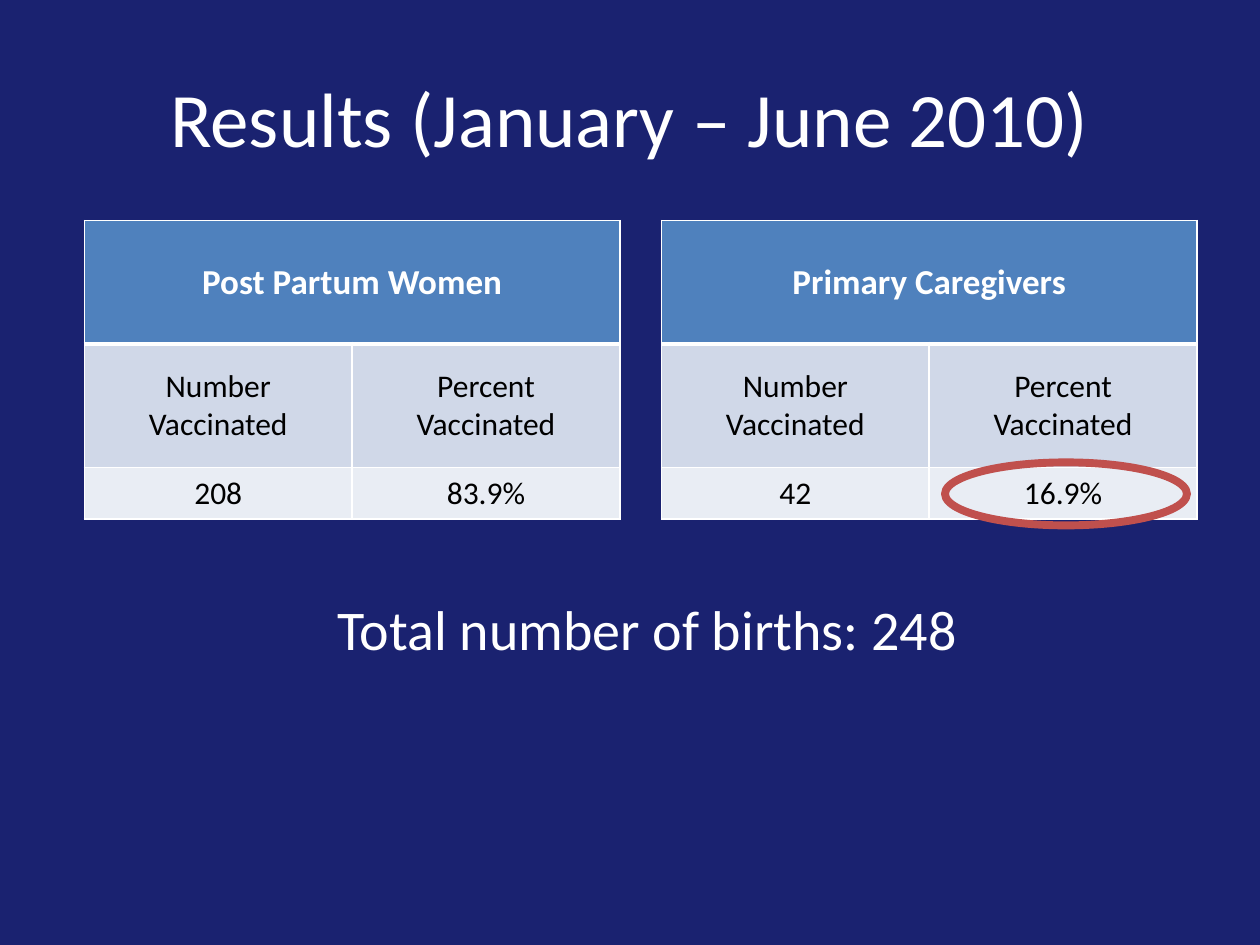
from dataclasses import dataclass
from lxml.etree import SubElement as Sub
from pptx import Presentation
from pptx.dml.color import RGBColor as RGB
from pptx.enum.shapes import MSO_SHAPE as Shape
from pptx.enum.text import MSO_ANCHOR as Anchor, PP_ALIGN as Align
from pptx.oxml.ns import qn
from pptx.util import Inches as In, Pt


@dataclass(frozen=True)
class Theme:
    font: str = "Calibri"
    back: str = "1A2270"
    white: str = "FFFFFF"
    black: str = "000000"
    head: str = "4F81BD"
    band: str = "D0D8E8"
    pale: str = "E9EDF4"
    ring: str = "C0504D"
    title: int = 44
    note: int = 32
    big: int = 20
    small: int = 18


T = Theme()
TOP, COL = 1.75, 2.125
ROWS = (0.98, 0.98, 0.41)
FILLS = (T.head, T.band, T.pale)
LABELS = ("Number Vaccinated", "Percent Vaccinated")
GROUPS = (
    (5.25, "Primary Caregivers", ("42", "16.9%")),
    (0.67, "Post Partum Women", ("208", "83.9%")),
)


def style(frame, size, color, align, bold=False):
    for para in frame.paragraphs:
        para.alignment = align
        for run in para.runs:
            font = run.font
            font.name, font.size, font.bold = T.font, Pt(size), bold
            font.color.rgb = RGB.from_string(color)


def place(shape, left, top, width, height):
    shape.left, shape.top = In(left), In(top)
    shape.width, shape.height = In(width), In(height)


def edge(cell, row):
    """White cell borders, thicker between the head and the rows below."""
    wide = {"T": 3 if row == 1 else 1, "B": 3 if row == 0 else 1}
    props = cell._tc.get_or_add_tcPr()
    for side in "LRTB":
        line = Sub(props, qn("a:ln" + side), w=str(Pt(wide.get(side, 1))))
        Sub(Sub(line, qn("a:solidFill")), qn("a:srgbClr"), val=T.white)


def add_grid(slide, left, head, values):
    cells = ((head, ""), LABELS, values)
    size = len(ROWS), len(LABELS)
    grid = slide.shapes.add_table(*size, In(left), In(TOP),
                                  In(COL * size[1]), In(sum(ROWS))).table
    for col in grid.columns:
        col.width = In(COL)
    grid.cell(0, 0).merge(grid.cell(0, 1))
    for r, (high, fill, texts) in enumerate(zip(ROWS, FILLS, cells)):
        grid.rows[r].height = In(high)
        look = (T.small, T.black) if r else (T.big, T.white)
        for c, text in enumerate(texts):
            cell = grid.cell(r, c)
            edge(cell, r)
            cell.fill.solid()
            cell.fill.fore_color.rgb = RGB.from_string(fill)
            cell.vertical_anchor = Anchor.MIDDLE
            if text:
                cell.text_frame.text = text
                style(cell.text_frame, *look, Align.CENTER, bold=r == 0)


def add_title(slide, text):
    title = slide.shapes.title
    place(title, 0.5, 0.3, 9, 1.25)
    title.text_frame.text = text
    title.text_frame.vertical_anchor = Anchor.MIDDLE
    style(title.text_frame, T.title, T.white, Align.CENTER)


def add_note(slide, text):
    box = slide.shapes.add_textbox(In(2.58), In(4.67), In(5.5), In(1.18))
    box.text_frame.word_wrap = True
    box.text_frame.text = text
    style(box.text_frame, T.note, T.white, Align.LEFT)


def add_ring(slide):
    ring = slide.shapes.add_shape(Shape.OVAL, In(7.5), In(3.67), In(1.92), In(0.5))
    ring.shadow.inherit = False
    ring.fill.background()
    ring.line.color.rgb = RGB.from_string(T.ring)
    ring.line.width = Pt(4.5)


def main():
    deck = Presentation()
    deck.slide_width, deck.slide_height = In(10), In(7.5)
    slide = deck.slides.add_slide(deck.slide_layouts[5])
    slide.background.fill.solid()
    slide.background.fill.fore_color.rgb = RGB.from_string(T.back)

    # Heading and total
    add_title(slide, "Results (January – June 2010)")
    add_note(slide, "Total number of births: 248")

    # One table per group, then the mark on the key value
    for group in GROUPS:
        add_grid(slide, *group)
    add_ring(slide)
    deck.save("out.pptx")


if __name__ == "__main__":
    main()
